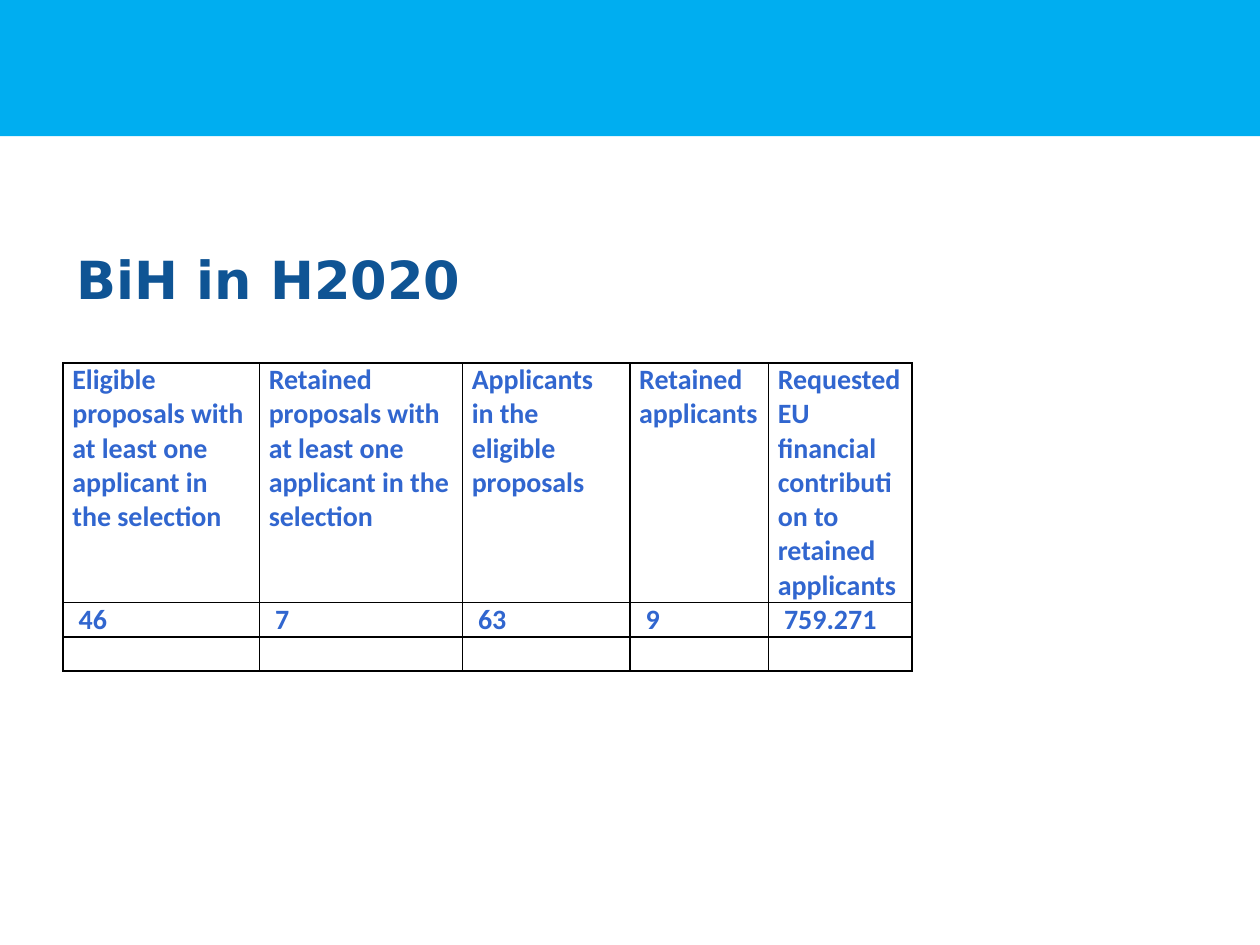
from dataclasses import dataclass

from lxml import etree
from pptx import Presentation
from pptx.dml.color import RGBColor
from pptx.enum.shapes import MSO_SHAPE
from pptx.enum.text import MSO_ANCHOR
from pptx.oxml.ns import qn
from pptx.util import Pt

RECTANGLE = MSO_SHAPE.RECTANGLE
MIDDLE = MSO_ANCHOR.MIDDLE
BLANK_LAYOUT = 6


@dataclass(frozen=True)
class Theme:
    banner: str = "00AEF0"
    title: str = "0F5494"
    table_text: str = "3166CF"
    border: str = "000000"
    title_font: str = "DejaVu Sans"
    table_font: str = "Calibri"
    title_size: float = 30
    table_size: float = 16
    border_width: float = 1
    cell_margin: float = 5.4


@dataclass(frozen=True)
class Column:
    heading: str
    value: str
    width: float


THEME = Theme()
COLUMNS = (
    Column("Eligible proposals with at least one applicant in the selection", " 46", 112.2),
    Column("Retained proposals with at least one applicant in the selection", " 7", 116),
    Column("Applicants in the eligible proposals", " 63", 95.7),
    Column("Retained applicants", " 9", 79.2),
    Column("Requested EU financial contribution to retained applicants", " 759.271", 82),
)
ROW_HEIGHTS = (137, 19.5, 19.5)


def style_paragraph(para, name: str, size: float, color: str) -> None:
    font = para.font
    font.name = name
    font.size = Pt(size)
    font.bold = True
    font.color.rgb = RGBColor.from_string(color)


def add_banner(page, width: float, height: float) -> None:
    banner = page.shapes.add_shape(RECTANGLE, 0, 0, Pt(width), Pt(height))
    banner.shadow.inherit = False
    banner.fill.solid()
    banner.fill.fore_color.rgb = RGBColor.from_string(THEME.banner)
    banner.line.fill.background()


def add_title(page, text: str) -> None:
    box = page.shapes.add_textbox(Pt(36.7), Pt(122.4), Pt(648), Pt(73.4))
    frame = box.text_frame
    frame.word_wrap = True
    frame.vertical_anchor = MIDDLE
    para = frame.paragraphs[0]
    para.text = text
    style_paragraph(para, THEME.title_font, THEME.title_size, THEME.title)


def add_borders(cell) -> None:
    properties = cell._tc.get_or_add_tcPr()
    for position, side in enumerate(("lnL", "lnR", "lnT", "lnB")):
        line = etree.Element(qn(f"a:{side}"), w=str(Pt(THEME.border_width)))
        fill = etree.SubElement(line, qn("a:solidFill"))
        etree.SubElement(fill, qn("a:srgbClr"), val=THEME.border)
        properties.insert(position, line)


def fill_cell(cell, text: str) -> None:
    cell.margin_left = cell.margin_right = Pt(THEME.cell_margin)
    cell.margin_top = cell.margin_bottom = 0
    cell.fill.background()
    add_borders(cell)
    para = cell.text_frame.paragraphs[0]
    if text:
        para.text = text
    style_paragraph(para, THEME.table_font, THEME.table_size, THEME.table_text)
    if not text:
        etree.SubElement(para._p, qn("a:endParaRPr"), sz=str(int(THEME.table_size * 100)))


def add_results(page, left: float, top: float) -> None:
    width = sum(column.width for column in COLUMNS)
    table = page.shapes.add_table(
        len(ROW_HEIGHTS), len(COLUMNS), Pt(left), Pt(top), Pt(width), Pt(sum(ROW_HEIGHTS))
    ).table
    table.first_row = False
    table.horz_banding = False
    for row, height in zip(table.rows, ROW_HEIGHTS):
        row.height = Pt(height)
    for index, column in enumerate(COLUMNS):
        table.columns[index].width = Pt(column.width)
        for row, text in enumerate((column.heading, column.value, "")):
            fill_cell(table.cell(row, index), text)


def main() -> None:
    deck = Presentation()
    deck.slide_width, deck.slide_height = Pt(720), Pt(540)
    page = deck.slides.add_slide(deck.slide_layouts[BLANK_LAYOUT])
    add_banner(page, 720, 77.8)
    add_title(page, "BiH in H2020")
    add_results(page, 36, 207.4)
    deck.save("out.pptx")


if __name__ == "__main__":
    main()
